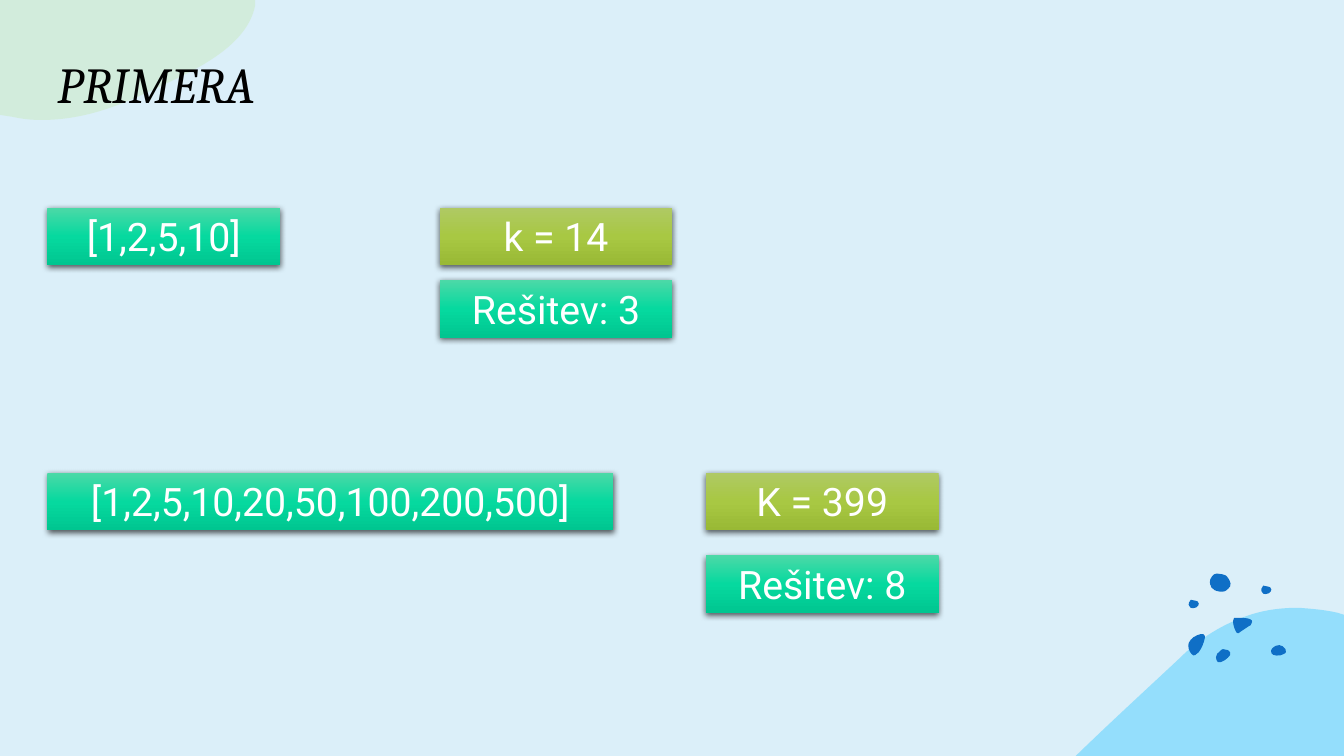
from copy import deepcopy

from lxml import etree
from pptx import Presentation
from pptx import util as u
from pptx.dml.color import RGBColor
from pptx.enum import shapes, text
from pptx.oxml.ns import qn

SKY = RGBColor(0xDB, 0xEF, 0xF9)
HILL_BLUE = RGBColor(0x4F, 0xCE, 0xFF)
DOT_BLUE = RGBColor(0x0F, 0x6F, 0xC6)
LEAF = RGBColor(0xCB, 0xEA, 0xC0)
BLACK = RGBColor(0, 0, 0)
WHITE = RGBColor(0xFF, 0xFF, 0xFF)
MINT = [RGBColor(0x4C, 0xD9, 0xA7), RGBColor(0x06, 0xD9, 0x9F), RGBColor(0, 0xC6, 0x90)]
OLIVE = [RGBColor(0xAF, 0xC9, 0x64), RGBColor(0xA8, 0xC8, 0x43), RGBColor(0x99, 0xB9, 0x35)]

BOX_WIDTH, BOX_HEIGHT = 2.31, 0.57

# Outlines in hundredths of an inch: a start point, then lines (2 numbers) and curves (6)
LEAF_OUTLINE = [(0, 0), (253, 0), (253, 6), (245, 44, 200, 67, 158, 86),
                (123, 103, 86, 119, 41, 119), (31, 119, 22, 118, 13, 116), (0, 114), (0, 0)]
HILL_OUTLINE = [(221, 0), (234, 1, 247, 2, 260, 5), (266, 7), (266, 147), (0, 147), (1, 146),
                (35, 113, 70, 81, 102, 51), (124, 29, 147, 16, 170, 8), (187, 2, 204, 0, 221, 0)]
SMALL_DOT = [(73, 17), (73, 17, 73, 13, 75, 12), (77, 12, 78, 12, 80, 13),
             (81, 13, 83, 14, 83, 16), (83, 17, 82, 19, 81, 19), (81, 19, 81, 20, 79, 20),
             (78, 20, 76, 21, 75, 20), (74, 18, 73, 18, 73, 17)]
LARGE_DOTS = [
    [(35, 75), (37, 75, 38, 75, 40, 76), (42, 77, 43, 79, 42, 81), (40, 84, 34, 89, 30, 88),
     (29, 87, 28, 85, 28, 83), (28, 81, 30, 78, 32, 77), (33, 76, 34, 75, 35, 75)],
    [(13, 60), (15, 60, 17, 60, 17, 62), (17, 63, 17, 63, 17, 64), (16, 69, 14, 74, 11, 78),
     (9, 80, 6, 83, 4, 80), (1, 77, 0, 72, 1, 69), (2, 66, 4, 65, 6, 63),
     (7, 63, 10, 60, 13, 60)],
    [(91, 71), (93, 71, 96, 73, 97, 75), (98, 77, 98, 79, 95, 80), (92, 82, 84, 82, 83, 79),
     (82, 77, 83, 75, 84, 74), (86, 72, 88, 71, 91, 71)],
    [(23, 12), (22, 12, 21, 6, 24, 3), (26, 1, 26, 0, 29, 0), (32, 0, 36, 1, 38, 2),
     (40, 4, 44, 9, 42, 13), (39, 16, 38, 18, 34, 18), (31, 18, 26, 17, 25, 15),
     (23, 14, 23, 13, 23, 12)],
    [(50, 44), (56, 44, 67, 44, 63, 50), (63, 51, 62, 52, 61, 52), (58, 54, 55, 56, 52, 58),
     (51, 59, 50, 60, 49, 59), (49, 59, 48, 58, 48, 58), (46, 54, 45, 51, 45, 47),
     (45, 46, 45, 45, 46, 44), (46, 44, 47, 44, 47, 44), (48, 44, 49, 44, 50, 44)],
]


def add_blob(page, left, top, outline, color, alpha=None):
    points = [(u.Inches(left + segment[i] / 100), u.Inches(top + segment[i + 1] / 100))
              for segment in outline for i in range(0, len(segment), 2)]
    builder = page.shapes.build_freeform(*points[0])
    builder.add_line_segments(points[1:], close=False)
    blob = builder.convert_to_shape()

    # Join each three points of a curved segment into one cubic curve
    route = blob._element.spPr.find(".//" + qn("a:path"))
    lines = iter(route.findall(qn("a:lnTo")))
    for segment in outline[1:]:
        first = next(lines)
        if len(segment) == 6:
            curve = etree.Element(qn("a:cubicBezTo"))
            first.addprevious(curve)
            for line in (first, next(lines), next(lines)):
                curve.append(line[0])
                route.remove(line)
    etree.SubElement(route, qn("a:close"))

    blob.shadow.inherit = False
    blob.fill.solid()
    blob.fill.fore_color.rgb = color
    blob.line.fill.background()
    if alpha:
        tint = blob._element.spPr.find(".//" + qn("a:srgbClr"))
        etree.SubElement(tint, qn("a:alpha"), val=str(alpha * 1000))


def add_dots(page, left, top):
    for outline in LARGE_DOTS + [SMALL_DOT]:
        add_blob(page, left, top, outline, DOT_BLUE)
    add_blob(page, left - 0.72, top + 0.14, SMALL_DOT, DOT_BLUE)


def add_title(page, left, top, width, height):
    title = page.shapes.title
    page.shapes._spTree.append(title._element)  # in front of the decoration
    title.left, title.top = u.Inches(left), u.Inches(top)
    title.width, title.height = u.Inches(width), u.Inches(height)
    title.text_frame.text = "PRIMERA"
    title.text_frame.vertical_anchor = text.MSO_ANCHOR.BOTTOM
    para = title.text_frame.paragraphs[0]
    para.alignment = text.PP_ALIGN.LEFT
    para.font.name, para.font.size = "Cambria", u.Pt(36)
    para.font.italic = True
    para.font.color.rgb = BLACK


def add_box(page, left, top, width, label, colors):
    box = page.shapes.add_shape(shapes.MSO_SHAPE.RECTANGLE, u.Inches(left), u.Inches(top),
                                u.Inches(width), u.Inches(BOX_HEIGHT))
    box.line.fill.background()

    # Three-stop vertical gradient
    box.fill.gradient()
    box.fill.gradient_angle = 270
    stops = box._element.spPr.find(".//" + qn("a:gsLst"))
    stops.append(deepcopy(stops[-1]))
    for stop, position, color in zip(box.fill.gradient_stops, (0, 0.5, 1), colors):
        stop.position = position
        stop.color.rgb = color

    # Soft shadow below
    box.shadow.inherit = False
    effects = box._element.spPr.find(qn("a:effectLst"))
    shadow = etree.SubElement(effects, qn("a:outerShdw"), blurRad=str(u.Pt(4.5)),
                              dist=str(u.Pt(1.5)), dir="5400000", algn="ctr", rotWithShape="0")
    shade = etree.SubElement(shadow, qn("a:srgbClr"), val=str(BLACK))
    etree.SubElement(shade, qn("a:alpha"), val="63000")

    frame = box.text_frame
    frame.word_wrap = True
    frame.auto_size = text.MSO_AUTO_SIZE.SHAPE_TO_FIT_TEXT
    frame.vertical_anchor = text.MSO_ANCHOR.TOP
    frame.text = label
    para = frame.paragraphs[0]
    para.alignment = text.PP_ALIGN.CENTER
    para.font.name, para.font.size = "Roboto", u.Pt(28)
    para.font.color.rgb = WHITE


def add_example(page, left, top, coins, coins_width, target, answer, target_shift, answer_drop):
    """Coins on the left, the target sum on the right, and the answer under it."""
    add_box(page, left, top, coins_width, coins, MINT)
    add_box(page, left + target_shift, top, BOX_WIDTH, target, OLIVE)
    add_box(page, left + target_shift, top + answer_drop, BOX_WIDTH, answer, MINT)


def main():
    deck = Presentation()
    deck.slide_width, deck.slide_height = u.Inches(13.33), u.Inches(7.5)
    page = deck.slides.add_slide(deck.slide_layouts[5])
    page.background.fill.solid()
    page.background.fill.fore_color.rgb = SKY

    # Corner decoration
    add_blob(page, 10.67, 6.03, HILL_OUTLINE, HILL_BLUE, alpha=50)
    add_dots(page, 11.78, 5.69)
    add_blob(page, 0, 0, LEAF_OUTLINE, LEAF, alpha=50)

    # Title and the two examples
    add_title(page, 0.47, 0.36, 11.02, 0.82)
    add_example(page, 0.47, 4.69, "[1,2,5,10,20,50,100,200,500]", 5.61,
                "K = 399", "Rešitev: 8", 6.53, 0.82)
    add_example(page, 0.47, 2.06, "[1,2,5,10]", BOX_WIDTH,
                "k = 14", "Rešitev: 3", 3.89, 0.72)
    deck.save("out.pptx")


if __name__ == "__main__":
    main()
